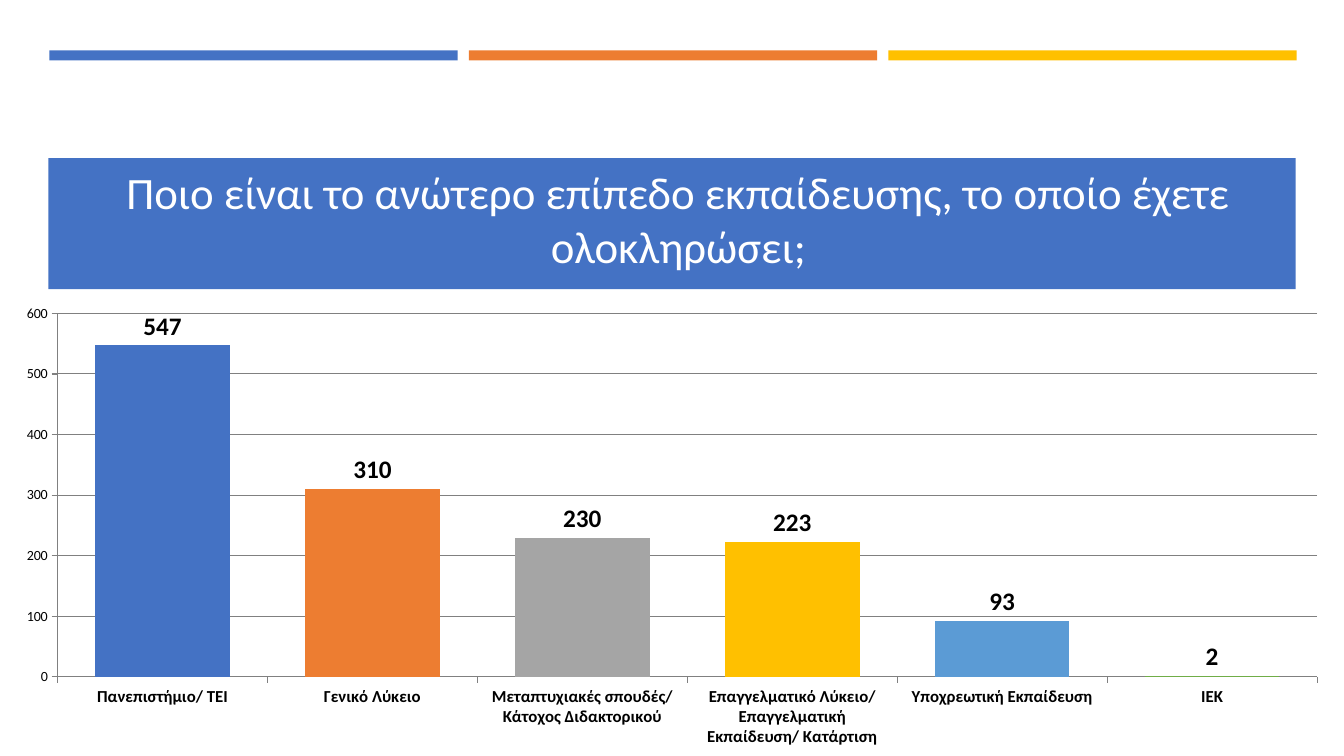
import pptx
import pptx.util
import pptx.chart.data
import pptx.dml.color
import pptx.enum.chart
import pptx.enum.shapes
import pptx.enum.text

# Content
TITLE = "Ποιο είναι το ανώτερο επίπεδο εκπαίδευσης, το οποίο έχετε ολοκληρώσει;"
LEVELS = [  # education level, answers, column colour
    ("Πανεπιστήμιο/ ΤΕΙ", 547, "blue"),
    ("Γενικό Λύκειο", 310, "orange"),
    ("Μεταπτυχιακές σπουδές/ Κάτοχος Διδακτορικού", 230, "gray"),
    ("Επαγγελματικό Λύκειο/ Επαγγελματική Εκπαίδευση/ Κατάρτιση", 223, "yellow"),
    ("Υποχρεωτική Εκπαίδευση", 93, "sky"),
    ("ΙΕΚ", 2, "green"),
]
STRIPES = ["blue", "orange", "yellow"]

THEME = {
    "font": "Calibri",
    "colors": {"blue": "4472C4", "orange": "ED7D31", "gray": "A5A5A5",
               "yellow": "FFC000", "sky": "5B9BD5", "green": "70AD47",
               "white": "FFFFFF", "black": "000000", "line": "808080"},
    "sizes": {"title": 32, "value": 18, "category": 12, "axis": 10},
}

# Layout in px, 100 px to the inch
PX = 9144
SLIDE_W, SLIDE_H = 1333, 750
STRIPE_X, STRIPE_Y, STRIPE_W, STRIPE_H, STRIPE_GAP = 49, 50, 405, 10, 11
BANNER = (48, 157, 1237, 130)
TITLE_BOX = (64, 164, 1218, 111)
CHART_BOX = (0, 294, 1333, 456)


def emu(*lengths):
    return [pptx.util.Emu(n * PX) for n in lengths]


def color(name):
    return pptx.dml.color.RGBColor.from_string(THEME["colors"][name])


def style_font(font, size, ink="black", bold=False):
    font.name = THEME["font"]
    font.size = pptx.util.Pt(THEME["sizes"][size])
    font.bold = bold
    font.color.rgb = color(ink)


def style_line(line):
    line.color.rgb = color("line")
    line.width = pptx.util.Pt(0.75)


def add_bar(s, box, fill):
    sp = s.shapes.add_shape(pptx.enum.shapes.MSO_SHAPE.RECTANGLE, *emu(*box))
    sp.shadow.inherit = False
    sp.fill.solid()
    sp.fill.fore_color.rgb = color(fill)
    sp.line.fill.background()


def add_title(s):
    sp = s.shapes.title
    sp.left, sp.top, sp.width, sp.height = emu(*TITLE_BOX)
    # Raise the title above the banner
    s.shapes._spTree.append(sp._element)
    tf = sp.text_frame
    tf.word_wrap = True
    tf.auto_size = pptx.enum.text.MSO_AUTO_SIZE.NONE
    tf.vertical_anchor = pptx.enum.text.MSO_ANCHOR.BOTTOM
    p = tf.paragraphs[0]
    p.alignment = pptx.enum.text.PP_ALIGN.CENTER
    p.line_spacing = 1.0
    r = p.add_run()
    r.text = TITLE
    style_font(r.font, "title", "white")


def add_level_chart(s):
    data = pptx.chart.data.CategoryChartData()
    data.categories = [level for level, _, _ in LEVELS]
    data.add_series("Series 1", [answers for _, answers, _ in LEVELS])
    kind = pptx.enum.chart.XL_CHART_TYPE.COLUMN_CLUSTERED
    chart = s.shapes.add_chart(kind, *emu(*CHART_BOX), data).chart
    chart.has_title = False
    chart.has_legend = False
    style_font(chart.font, "axis")

    # Columns and value labels
    plot = chart.plots[0]
    plot.gap_width, plot.overlap = 56, -7
    plot.vary_by_categories = False
    series = plot.series[0]
    for i, (_, _, name) in enumerate(LEVELS):
        fill = series.points[i].format.fill
        fill.solid()
        fill.fore_color.rgb = color(name)
    labels = series.data_labels
    labels.show_value = True
    labels.position = pptx.enum.chart.XL_LABEL_POSITION.OUTSIDE_END
    style_font(labels.font, "value", bold=True)

    # Axes
    axes = [(chart.category_axis, "category", True),
            (chart.value_axis, "axis", False)]
    for axis, size, bold in axes:
        axis.major_tick_mark = pptx.enum.chart.XL_TICK_MARK.OUTSIDE
        axis.minor_tick_mark = pptx.enum.chart.XL_TICK_MARK.NONE
        style_font(axis.tick_labels.font, size, bold=bold)
        style_line(axis.format.line)
    values = chart.value_axis
    values.minimum_scale, values.maximum_scale, values.major_unit = 0, 600, 100
    values.has_major_gridlines = True
    style_line(values.major_gridlines.format.line)


def main():
    prs = pptx.Presentation()
    prs.slide_width, prs.slide_height = emu(SLIDE_W, SLIDE_H)
    s = prs.slides.add_slide(prs.slide_layouts[5])

    # Top stripes and title banner
    for i, name in enumerate(STRIPES):
        x = STRIPE_X + i * (STRIPE_W + STRIPE_GAP)
        add_bar(s, (x, STRIPE_Y, STRIPE_W, STRIPE_H), name)
    add_bar(s, BANNER, "blue")

    add_title(s)
    add_level_chart(s)
    prs.save("out.pptx")


if __name__ == "__main__":
    main()
